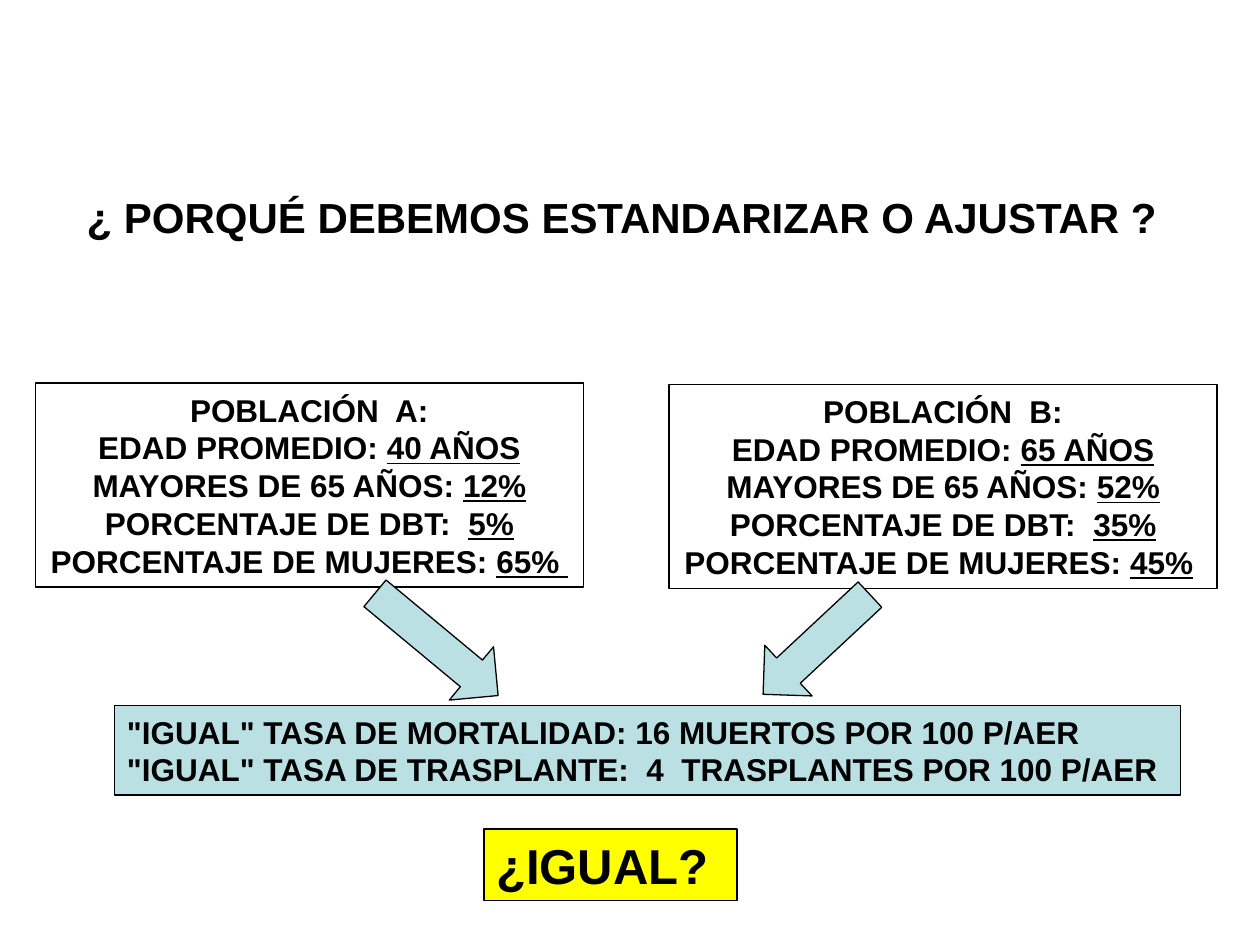
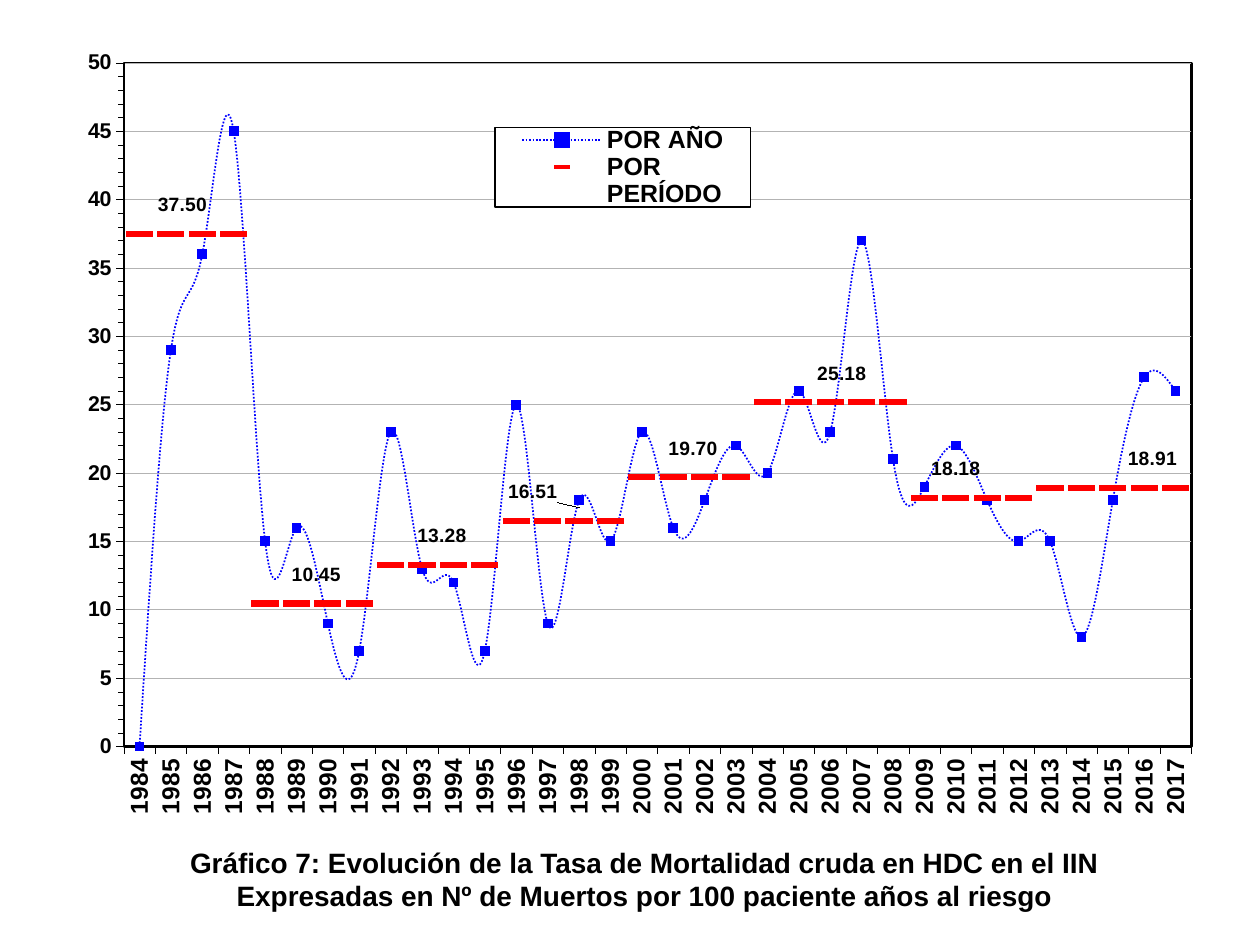
"""Build two slides on why mortality rates need adjusting."""
from dataclasses import dataclass
from typing import NamedTuple

from pptx import Presentation
from pptx.chart.data import CategoryChartData
from pptx.dml.color import RGBColor
from pptx.enum.chart import XL_CHART_TYPE as Kind, XL_LABEL_POSITION as Spot
from pptx.enum.chart import XL_LEGEND_POSITION as Side, XL_MARKER_STYLE as Mark
from pptx.enum.chart import XL_TICK_MARK as Tick
from pptx.enum.dml import MSO_LINE_DASH_STYLE as Dash
from pptx.enum.shapes import MSO_SHAPE as Form
from pptx.enum.text import PP_ALIGN as Align
from pptx.oxml import parse_xml
from pptx.oxml.ns import nsdecls, qn
from pptx.util import Inches, Pt


@dataclass(frozen=True)
class Theme:
    font: str = "Arial"
    ink: str = "000000"
    pale: str = "BBE0E3"
    alert: str = "FFFF00"
    year: str = "0000FF"
    span: str = "FF0000"
    grid: str = "B3B3B3"
    title: float = 24
    body: float = 18
    shout: float = 28
    note: float = 16
    years: float = 14
    scale: float = 12.2
    legend: float = 14.2
    label: float = 11
    edge: float = 0.75


class Area(NamedTuple):
    left: float
    top: float
    width: float
    height: float


class Box(NamedTuple):
    area: Area
    lines: list[str]
    size: float
    fill: str | None = None
    align: Align = Align.LEFT


class Arrow(NamedTuple):
    area: Area
    turn: float


class Span(NamedTuple):
    rate: float
    count: int
    mark: int
    shift: float


THEME = Theme()


def group(name: str, *facts: str) -> list[str]:
    age, old, dbt, women = facts
    return [f"POBLACIÓN  {name}:", f"EDAD PROMEDIO: |{age}",
            f"MAYORES DE 65 AÑOS: |{old}", f"PORCENTAJE DE DBT:  |{dbt}",
            f"PORCENTAJE DE MUJERES: |{women}"]


TITLE = ["¿ PORQUÉ DEBEMOS ESTANDARIZAR O AJUSTAR ?"]
BOXES = [
    Box(Area(0.28, 3.04, 4.35, 1.62), group("A", "40 AÑOS", "12%", "5%", "65% "),
        THEME.body, align=Align.CENTER),
    Box(Area(5.31, 3.05, 4.35, 1.62), group("B", "65 AÑOS", "52%", "35%", "45%| "),
        THEME.body, align=Align.CENTER),
    Box(Area(0.91, 5.6, 8.46, 0.71),
        ['"IGUAL" TASA DE MORTALIDAD: 16 MUERTOS POR 100 P/AER',
         '"IGUAL" TASA DE TRASPLANTE:  4  TRASPLANTES POR 100 P/AER'],
        THEME.body, THEME.pale),
    Box(Area(3.84, 6.58, 2.01, 0.57), ["¿IGUAL?"], THEME.shout, THEME.alert),
]
ARROWS = [Arrow(Area(2.83, 4.84, 1.27, 0.55), 39.7),
          Arrow(Area(5.9, 4.84, 1.16, 0.55), 137)]

FIRST = 1984
RATES = [0, 29, 36, 45, 15, 16, 9, 7, 23, 13, 12, 7, 25, 9, 18, 15, 23,
         16, 18, 22, 20, 26, 23, 37, 21, 19, 22, 18, 15, 15, 8, 18, 27, 26]
SPANS = [Span(37.5, 4, 1, 0.01), Span(10.45, 4, 6, -0.01),
         Span(13.28, 4, 10, -0.01), Span(16.51, 4, 14, -0.04),
         Span(19.7, 4, 18, -0.01), Span(25.18, 5, 22, 0.01),
         Span(18.18, 4, 26, 0), Span(18.91, 5, 33, -0.02)]
NOTE = ["Gráfico 7: Evolución de la Tasa de Mortalidad cruda en HDC en el IIN",
        "Expresadas en Nº de Muertos por 100 paciente años al riesgo"]


def spot(area: Area) -> list:
    return [Inches(side) for side in area]


def tint(color: str) -> RGBColor:
    return RGBColor.from_string(color)


def style(font, size: float) -> None:
    font.name, font.size, font.bold = THEME.font, Pt(size), True
    font.color.rgb = tint(THEME.ink)


def write(shape, lines: list[str], *, size: float, align: Align = Align.LEFT) -> None:
    """Fill a shape with lines whose parts between bars are underlined."""
    frame = shape.text_frame
    frame.word_wrap = True
    for row, line in enumerate(lines):
        para = frame.paragraphs[0] if row == 0 else frame.add_paragraph()
        para.alignment = align
        for part, text in enumerate(line.split("|")):
            run = para.add_run()
            run.text = text
            style(run.font, size)
            if part % 2:
                run.font.underline = True


def label(slide, area: Area, lines: list[str], size: float, align: Align) -> None:
    write(slide.shapes.add_textbox(*spot(area)), lines, size=size, align=align)


def draw(slide, form: Form, area: Area, fill: str | None):
    shape = slide.shapes.add_shape(form, *spot(area))
    shape.shadow.inherit = False
    if fill:
        shape.fill.solid()
        shape.fill.fore_color.rgb = tint(fill)
    else:
        shape.fill.background()
    shape.line.color.rgb = tint(THEME.ink)
    shape.line.width = Pt(THEME.edge)
    return shape


def layout(area: Area, inner: bool = False):
    target = '<c:layoutTarget val="inner"/>' if inner else ""
    modes = "".join(f'<c:{axis}Mode val="edge"/>' for axis in "xy")
    sides = "".join(f'<c:{key} val="{val}"/>' for key, val in zip("xywh", area))
    return parse_xml(f'<c:layout {nsdecls("c")}><c:manualLayout>{target}{modes}'
                     f'{sides}</c:manualLayout></c:layout>')


def frame(width: float, fill: str):
    return parse_xml(f'<c:spPr {nsdecls("c", "a")}>{fill}<a:ln w="{Pt(width)}">'
                     f'<a:solidFill><a:srgbClr val="{THEME.ink}"/></a:solidFill>'
                     f'</a:ln></c:spPr>')


def mark(series, form: Mark, size: int, color: str) -> None:
    series.marker.style, series.marker.size = form, size
    look = series.marker.format
    look.fill.solid()
    look.fill.fore_color.rgb = tint(color)
    look.line.color.rgb = tint(color)


def tag(series, span: Span) -> None:
    """Label one point of a period, moved sideways."""
    item = series.points[span.mark].data_label
    style(item.font, THEME.label)
    item.position = Spot.ABOVE
    index = series._element.find(qn("c:dLbls")).xpath(
        f'c:dLbl/c:idx[@val="{span.mark}"]')[0]
    index.addnext(parse_xml(
        f'<c:numFmt {nsdecls("c")} formatCode="#,##0.00" sourceLinked="0"/>'))
    index.addnext(parse_xml(
        f'<c:layout {nsdecls("c")}><c:manualLayout><c:x val="{span.shift}"/>'
        f'<c:y val="0"/></c:manualLayout></c:layout>'))


def axes(chart) -> None:
    years, scale = chart.category_axis, chart.value_axis
    for axis, size in ((years, THEME.years), (scale, THEME.scale)):
        style(axis.tick_labels.font, size)
        axis.major_tick_mark = Tick.OUTSIDE
        axis.format.line.color.rgb = tint(THEME.ink)
        axis.format.line.width = Pt(0.25)
    years._element.find(qn("c:txPr")).find(qn("a:bodyPr")).set("rot", "-5400000")
    scale.minimum_scale, scale.maximum_scale = 0, 50
    scale.major_unit, scale.minor_unit = 5, 1
    scale.minor_tick_mark = Tick.OUTSIDE
    scale.tick_labels.number_format = "0"
    scale.tick_labels.number_format_is_linked = False
    grid = scale.major_gridlines.format.line
    grid.color.rgb, grid.width = tint(THEME.grid), Pt(0.25)


def place(chart) -> None:
    """Set the plot and legend areas and their borders."""
    plot = chart._chartSpace.chart.plotArea
    old = plot.find(qn("c:layout"))
    if old is not None:
        plot.remove(old)
    plot.insert(0, layout(Area(0.06, 0.03, 0.92, 0.86), inner=True))
    plot.append(frame(1.5, "<a:noFill/>"))
    chart.has_legend = True
    legend = chart.legend
    legend.position = Side.RIGHT
    legend.include_in_layout = False
    style(legend.font, THEME.legend)
    root = legend._element
    for old in root.findall(qn("c:layout")):
        root.remove(old)
    root.find(qn("c:legendPos")).addnext(layout(Area(0.38, 0.11, 0.22, 0.1)))
    white = '<a:solidFill><a:srgbClr val="FFFFFF"/></a:solidFill>'
    root.find(qn("c:overlay")).addnext(frame(THEME.edge, white))


def plot(slide, area: Area) -> None:
    data = CategoryChartData()
    data.categories = [str(FIRST + step) for step in range(len(RATES))]
    data.add_series("POR AÑO", RATES)
    data.add_series("POR PERÍODO", [s.rate for s in SPANS for _ in range(s.count)])
    chart = slide.shapes.add_chart(Kind.LINE_MARKERS, *spot(area), data).chart
    style(chart.font, THEME.years)
    chart.has_title = False
    chart.plots[0].vary_by_categories = False
    year, span = chart.plots[0].series
    year.smooth, span.smooth = True, False
    line = year.format.line
    line.color.rgb, line.width = tint(THEME.year), Pt(1)
    line.dash_style = Dash.ROUND_DOT
    span.format.line.fill.background()
    mark(year, Mark.SQUARE, 5, THEME.year)
    mark(span, Mark.DASH, 15, THEME.span)
    span.data_labels.show_value = False
    for item in SPANS:
        tag(span, item)
    axes(chart)
    place(chart)


def main() -> None:
    deck = Presentation()
    deck.slide_width, deck.slide_height = Inches(10), Inches(7.5)
    why, trend = (deck.slides.add_slide(deck.slide_layouts[6]) for _ in range(2))
    label(why, Area(0.59, 1.47, 8.87, 0.5), TITLE, THEME.title, Align.LEFT)
    for box in BOXES:
        shape = draw(why, Form.RECTANGLE, box.area, box.fill)
        write(shape, box.lines, size=box.size, align=box.align)
    for arrow in ARROWS:
        draw(why, Form.RIGHT_ARROW, arrow.area, THEME.pale).rotation = arrow.turn
    plot(trend, Area(0.43, 0.31, 9.21, 6.31))
    label(trend, Area(1.39, 6.66, 7.45, 0.64), NOTE, THEME.note, Align.CENTER)
    deck.save("out.pptx")


if __name__ == "__main__":
    main()
